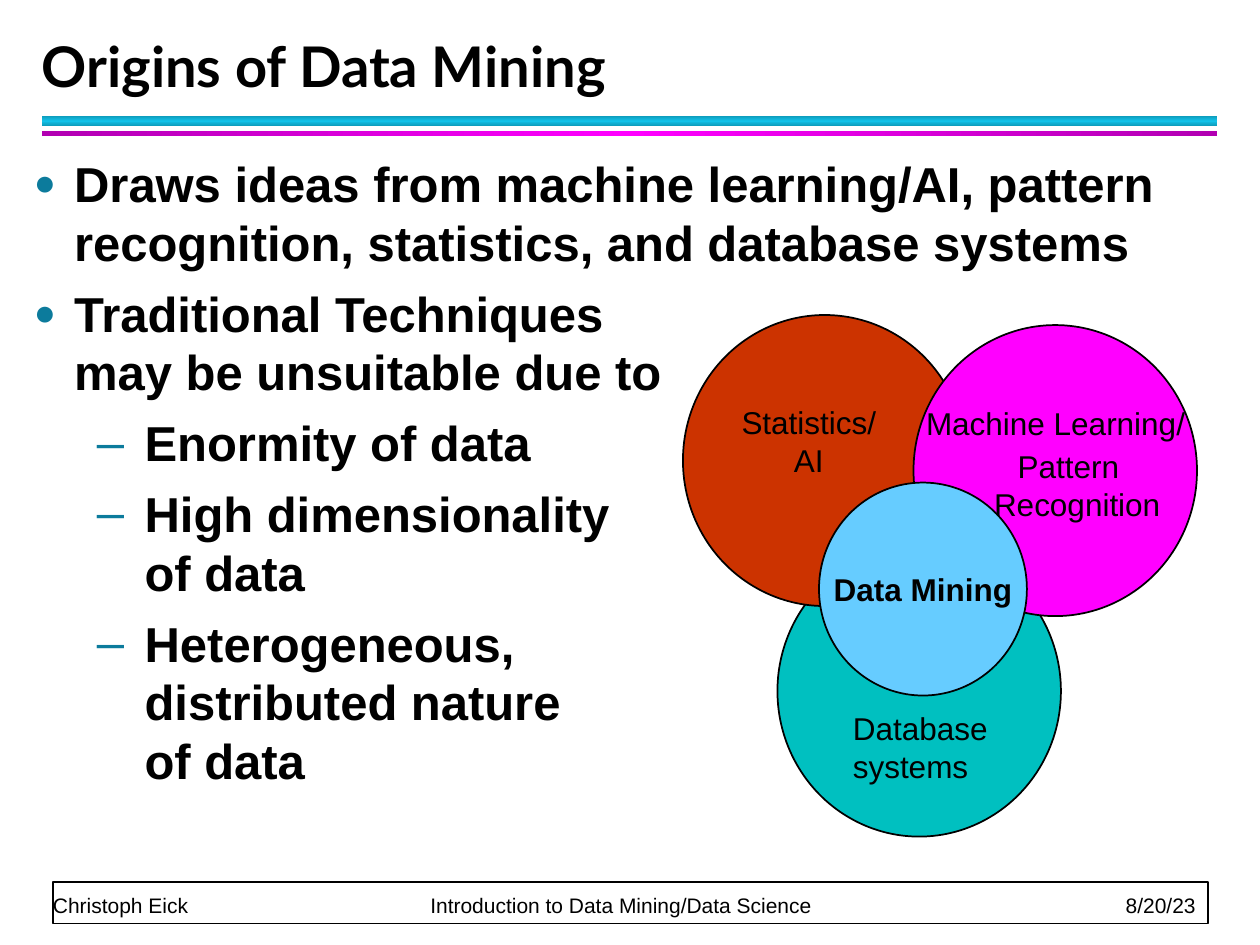
from lxml import etree
from pptx import Presentation
from pptx import util as u
from pptx.dml.color import RGBColor
from pptx.enum import shapes, text
from pptx.oxml.ns import qn

Inches, Pt = u.Inches, u.Pt
LEFT, CENTER = text.PP_ALIGN.LEFT, text.PP_ALIGN.CENTER
TOP, MIDDLE, BOTTOM = (text.MSO_ANCHOR.TOP, text.MSO_ANCHOR.MIDDLE,
                       text.MSO_ANCHOR.BOTTOM)


def color(value):
    return RGBColor.from_string(value)


def write(box, lines, size, font="Arial", bold=False, anchor=TOP,
          margins=(0.1, 0.05), wrap=True):
    """Fill a shape with (words, paragraph format) pairs."""
    frame = box.text_frame
    side, edge = (Inches(margin) for margin in margins)
    frame_format = {"word_wrap": wrap, "vertical_anchor": anchor,
                    "margin_left": side, "margin_right": side,
                    "margin_top": edge, "margin_bottom": edge}
    for name, value in frame_format.items():
        setattr(frame, name, value)
    for index, (words, para_format) in enumerate(lines):
        para = frame.add_paragraph() if index else frame.paragraphs[0]
        para.text = words
        for name, value in para_format.items():
            setattr(para, name, value)
        for span in para.runs:
            span.font.color.rgb = color("000000")
            for name, value in {"size": Pt(size), "name": font, "bold": bold}.items():
                setattr(span.font, name, value)
    return frame.paragraphs


deck = Presentation()
deck.slide_width, deck.slide_height = Inches(10), Inches(7.5)
page = deck.slides.add_slide(deck.slide_layouts[6])

# Footer frame, with centre and right tab stops for its three parts
frame_box = page.shapes.add_shape(shapes.MSO_SHAPE.RECTANGLE, Inches(0.42),
                                  Inches(7), Inches(9.17), Inches(0.33))
frame_box.shadow.inherit = False
frame_box.fill.solid()
frame_box.fill.fore_color.rgb = color("FFFFFF")
frame_box.line.color.rgb = color("000000")
frame_box.line.width = Pt(1)

footer = page.shapes.add_textbox(Inches(0.42), Inches(7.03), Inches(9.15), Inches(0.25))
footer_para = write(
    footer,
    [("Christoph Eick\tIntroduction to Data Mining/Data Science\t8/20/23",
      {"line_spacing": Pt(20)})],
    12, anchor=BOTTOM, margins=(0, 0))[0]
tabs = etree.SubElement(footer_para._p.get_or_add_pPr(), qn("a:tabLst"))
for position, align in ((4.51, "ctr"), (9.07, "r")):
    etree.SubElement(tabs, qn("a:tab"), pos=str(Inches(position)), algn=align)

# Two gradient rules under the title
for top, height, outer, middle, angle in (
        (0.92, 0.08, "0E9BBA", "12C2E9", 90),
        (1.04, 0.04, "B200B2", "FF00FF", 0)):
    rule = page.shapes.add_shape(shapes.MSO_SHAPE.RECTANGLE, Inches(0.33),
                                 Inches(top), Inches(9.33), Inches(height))
    rule.shadow.inherit = False
    rule.line.fill.background()
    rule.fill.gradient()
    rule.fill.gradient_angle = angle
    stops = rule.fill._fill._gradFill.find(qn("a:gsLst"))
    for stop in list(stops):
        stops.remove(stop)
    for place, tone in ((0, outer), (50000, middle), (100000, outer)):
        stop = etree.SubElement(stops, qn("a:gs"), pos=str(place))
        etree.SubElement(stop, qn("a:srgbClr"), val=tone)

# Title
title = page.shapes.add_textbox(Inches(0.33), Inches(0.25), Inches(9.06), Inches(0.58))
write(title, [("Origins of Data Mining", {"line_spacing": Pt(36)})], 32,
      font="Lato", bold=True, anchor=BOTTOM, margins=(0, 0.05))

# Bulleted body: (level, words)
points = [
    (0, "Draws ideas from machine learning/AI, pattern recognition, "
        "statistics, and database systems"),
    (0, "Traditional Techniques\nmay be unsuitable due to"),
    (1, "Enormity of data"),
    (1, "High dimensionality \nof data"),
    (1, "Heterogeneous, \ndistributed nature \nof data"),
]
bullets = [(0.32, -0.32, "●", 75), (0.88, -0.38, "–", 100)]
body = page.shapes.add_textbox(Inches(0.17), Inches(1.17), Inches(9.67), Inches(6))
paras = write(body, [(words, {"level": level, "space_before": Pt(2.8),
                              "space_after": Pt(4)}) for level, words in points],
              28, bold=True)
for para, (level, words) in zip(paras, points):
    margin, indent, mark, percent = bullets[level]
    props = para._p.get_or_add_pPr()
    props.set("marL", str(Inches(margin)))
    props.set("indent", str(Inches(indent)))
    bullet_color = etree.SubElement(props, qn("a:buClr"))
    etree.SubElement(bullet_color, qn("a:srgbClr"), val="0C7B9C")
    etree.SubElement(props, qn("a:buSzPct"), val=str(percent * 1000))
    etree.SubElement(props, qn("a:buFont"), typeface="Arial")
    etree.SubElement(props, qn("a:buChar"), char=mark)

# Overlapping circles and their labels, back to front:
# (left, top, width, height, fill or None for a label, lines, side margin)
diagram = [
    (6.17, 4.33, 2.25, 2.31, "00C0C0", [], 0.1),
    (5.42, 2.5, 2.25, 2.31, "CC3300", [], 0.1),
    (7.25, 2.58, 2.25, 2.31, "FF00FF", [], 0.1),
    (7.35, 3.16, 2.33, 1.05, None,
     [("Machine Learning/", {"alignment": LEFT}),
      ("Pattern \n Recognition", {"alignment": CENTER, "space_before": Pt(2.7)})], 0),
    (5.67, 3.15, 1.5, 0.7, None, [("Statistics/\nAI", {"alignment": CENTER})], 0.1),
    (6.5, 3.83, 1.65, 1.69, "66CCFF", [("Data Mining", {"alignment": CENTER})], 0.1),
    (6.67, 5.58, 1.58, 0.7, None, [("Database systems", {"alignment": LEFT})], 0.1),
]
for *place, fill, lines, side in diagram:
    place = [Inches(length) for length in place]
    if fill:
        item = page.shapes.add_shape(shapes.MSO_SHAPE.OVAL, *place)
        item.shadow.inherit = False
        item.fill.solid()
        item.fill.fore_color.rgb = color(fill)
        item.line.color.rgb = color("000000")
        item.line.width = Pt(1)
    else:
        item = page.shapes.add_textbox(*place)
    if lines:
        write(item, lines, 18, bold=bool(fill), anchor=MIDDLE if fill else TOP,
              margins=(side, 0.05), wrap=not fill)

deck.save("out.pptx")
